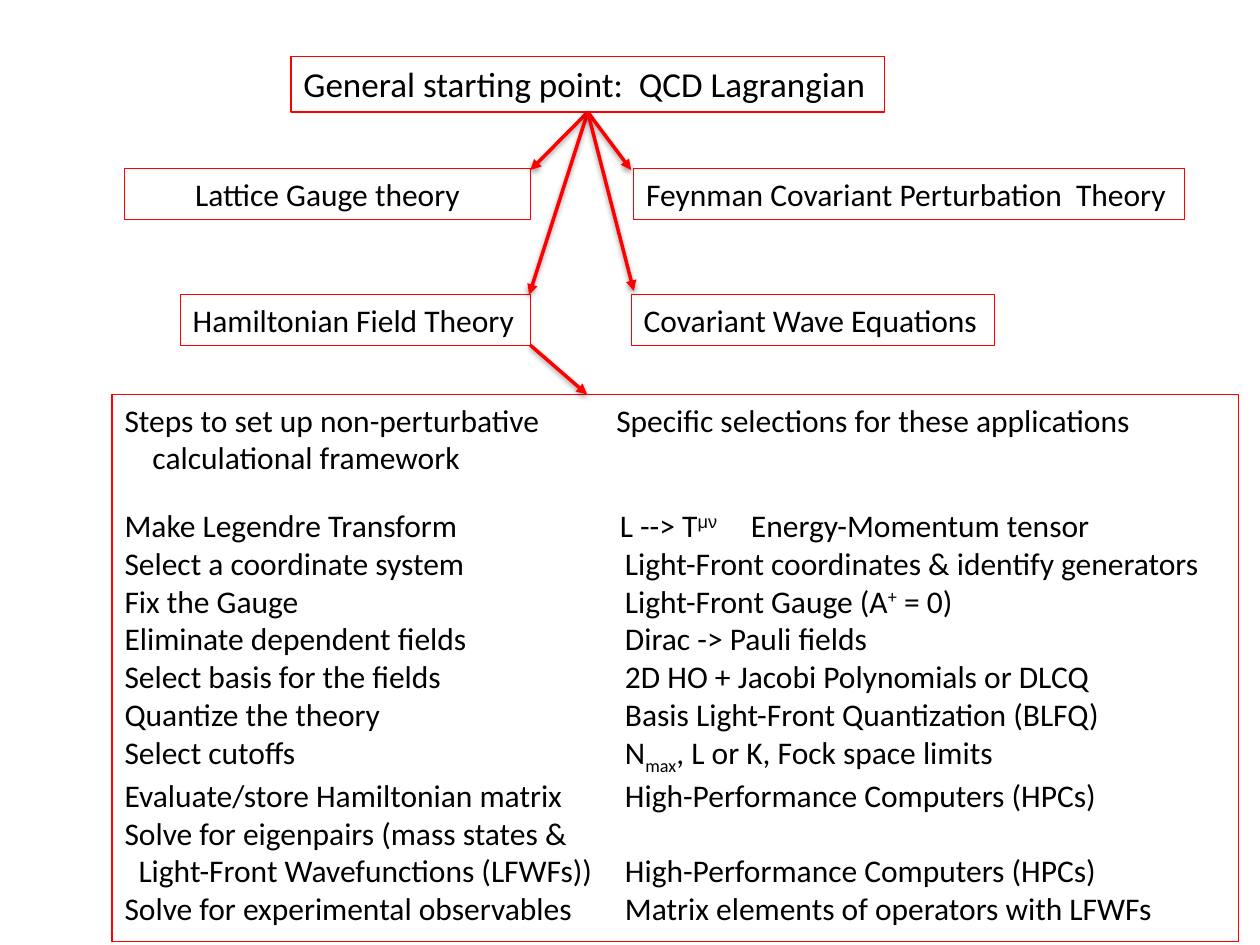
import pptx
import pptx.dml.color
import pptx.enum.dml
import pptx.enum.shapes
import pptx.enum.text
import pptx.oxml
import pptx.oxml.ns
import pptx.util

Pt = pptx.util.Pt
ALIGN = pptx.enum.text.PP_ALIGN

THEME = {
    "accent": pptx.dml.color.RGBColor(0xFF, 0x00, 0x00),
    "ink": pptx.dml.color.RGBColor(0x00, 0x00, 0x00),
    "font": "Calibri",
    "symbol_font": "Arial",
    "title_size": 20,
    "body_size": 18,
    "box_line": 0.75,
    "arrow_line": 2,
}
SUPER, SUB = 30000, -25000

# text, (left, top, width, height), alignment
START = ("General starting point:  QCD Lagrangian", (166.3, 32.4, 339.1, 31.7), ALIGN.LEFT)
APPROACHES = {
    "lattice": ("Lattice Gauge theory", (71.3, 96.5, 231.8, 28.8), ALIGN.CENTER),
    "feynman": ("Feynman Covariant Perturbation  Theory", (362.2, 96.5, 314.6, 28.8), ALIGN.LEFT),
    "hamiltonian": ("Hamiltonian Field Theory", (103, 168.5, 200.2, 28.8), ALIGN.LEFT),
    "wave": ("Covariant Wave Equations", (360.7, 168.5, 207.4, 28.8), ALIGN.LEFT),
}
START_ARROW_TIPS = [(303.1, 97.2), (360.7, 97.2), (302.4, 168.5), (362.2, 166.3)]
STEPS_ARROW = ((303.1, 197.3), (335.5, 225.4))

STEPS_AREA = (64.1, 225.4, 643.7, 312.5)
HEADING_COLUMN, COLUMN, TENSOR_COLUMN = 281, 286, 358
# runs (plain text, or text with its baseline and font), tab stops, space before
STEPS = [
    (["Steps to set up non-perturbative\tSpecific selections for these applications"],
     [HEADING_COLUMN], 0),
    (["\tcalculational framework"], [16], 0),
    (["Make Legendre Transform\tL --> T", ("μν", SUPER, THEME["symbol_font"]),
      "\tEnergy-Momentum tensor"], [HEADING_COLUMN + 2, TENSOR_COLUMN], 17),
    (["Select a coordinate system\tLight-Front coordinates & identify generators"], [COLUMN], 0),
    (["Fix the Gauge\tLight-Front Gauge (A", ("+", SUPER, THEME["font"]), " = 0)"], [COLUMN], 0),
    (["Eliminate dependent fields\tDirac -> Pauli fields"], [COLUMN], 0),
    (["Select basis for the fields\t2D HO + Jacobi Polynomials or DLCQ"], [COLUMN], 0),
    (["Quantize the theory\tBasis Light-Front Quantization (BLFQ)"], [COLUMN], 0),
    (["Select cutoffs\tN", ("max", SUB, THEME["font"]), ", L or K, Fock space limits"],
     [COLUMN], 0),
    (["Evaluate/store Hamiltonian matrix\tHigh-Performance Computers (HPCs)"], [COLUMN], 0),
    (["Solve for eigenpairs (mass states &"], [], 0),
    (["\tLight-Front Wavefunctions (LFWFs))\tHigh-Performance Computers (HPCs)"],
     [8, COLUMN], 0),
    (["Solve for experimental observables\tMatrix elements of operators with LFWFs"],
     [COLUMN], 0),
]

NS = pptx.oxml.ns.nsdecls("a")
SHADOW = (
    f'<a:effectLst {NS}><a:outerShdw blurRad="{Pt(3.1)}" dist="{Pt(1.6)}" dir="5400000" '
    'rotWithShape="0"><a:srgbClr val="000000"><a:alpha val="38000"/></a:srgbClr>'
    "</a:outerShdw></a:effectLst>"
)


def add_box(slide, area):
    box = slide.shapes.add_shape(
        pptx.enum.shapes.MSO_SHAPE.RECTANGLE, *(Pt(length) for length in area))
    box.shadow.inherit = False
    box.fill.background()
    box.line.color.rgb = THEME["accent"]
    box.line.width = Pt(THEME["box_line"])
    box.text_frame.word_wrap = True
    box.text_frame.vertical_anchor = pptx.enum.text.MSO_ANCHOR.TOP
    return box


def add_run(paragraph, text, size, baseline=0, font=THEME["font"]):
    run = paragraph.add_run()
    run.text = text
    run.font.name = font
    run.font.size = Pt(size)
    run.font.color.rgb = THEME["ink"]
    if baseline:
        run.font._element.set("baseline", str(baseline))


def add_label(slide, label, size):
    text, area, alignment = label
    box = add_box(slide, area)
    paragraph = box.text_frame.paragraphs[0]
    paragraph.alignment = alignment
    add_run(paragraph, text, size)
    return box


def set_tab_stops(paragraph, stops):
    tabs = "".join(f'<a:tab pos="{Pt(stop)}" algn="l"/>' for stop in stops)
    paragraph._p.get_or_add_pPr().append(
        pptx.oxml.parse_xml(f"<a:tabLst {NS}>{tabs}</a:tabLst>"))


def add_steps(slide):
    frame = add_box(slide, STEPS_AREA).text_frame
    for index, (runs, stops, gap) in enumerate(STEPS):
        paragraph = frame.add_paragraph() if index else frame.paragraphs[0]
        paragraph.alignment = ALIGN.LEFT
        if stops:
            set_tab_stops(paragraph, stops)
        if gap:
            paragraph.space_before = Pt(gap)
        for run in runs:
            text, *style = (run,) if isinstance(run, str) else run
            add_run(paragraph, text, THEME["body_size"], *style)


def add_arrow(slide, start, tip):
    arrow = slide.shapes.add_connector(
        pptx.enum.shapes.MSO_CONNECTOR.STRAIGHT, *(Pt(length) for length in (*start, *tip)))
    arrow.line.color.rgb = THEME["accent"]
    arrow.line.width = Pt(THEME["arrow_line"])
    arrow.line._get_or_add_ln().append(
        pptx.oxml.parse_xml(f'<a:tailEnd {NS} type="triangle"/>'))
    arrow._element.spPr.append(pptx.oxml.parse_xml(SHADOW))
    return arrow


def main():
    deck = pptx.Presentation()
    deck.slide_width, deck.slide_height = Pt(720), Pt(540)
    slide = deck.slides.add_slide(deck.slide_layouts[6])

    add_steps(slide)
    start_box = add_label(slide, START, THEME["title_size"])
    for approach in APPROACHES.values():
        add_label(slide, approach, THEME["body_size"])

    left, top, width, height = START[1]
    for tip in START_ARROW_TIPS:
        arrow = add_arrow(slide, (left + width / 2, top + height), tip)
        arrow.begin_connect(start_box, 2)
    add_arrow(slide, *STEPS_ARROW)

    deck.save("out.pptx")


if __name__ == "__main__":
    main()
